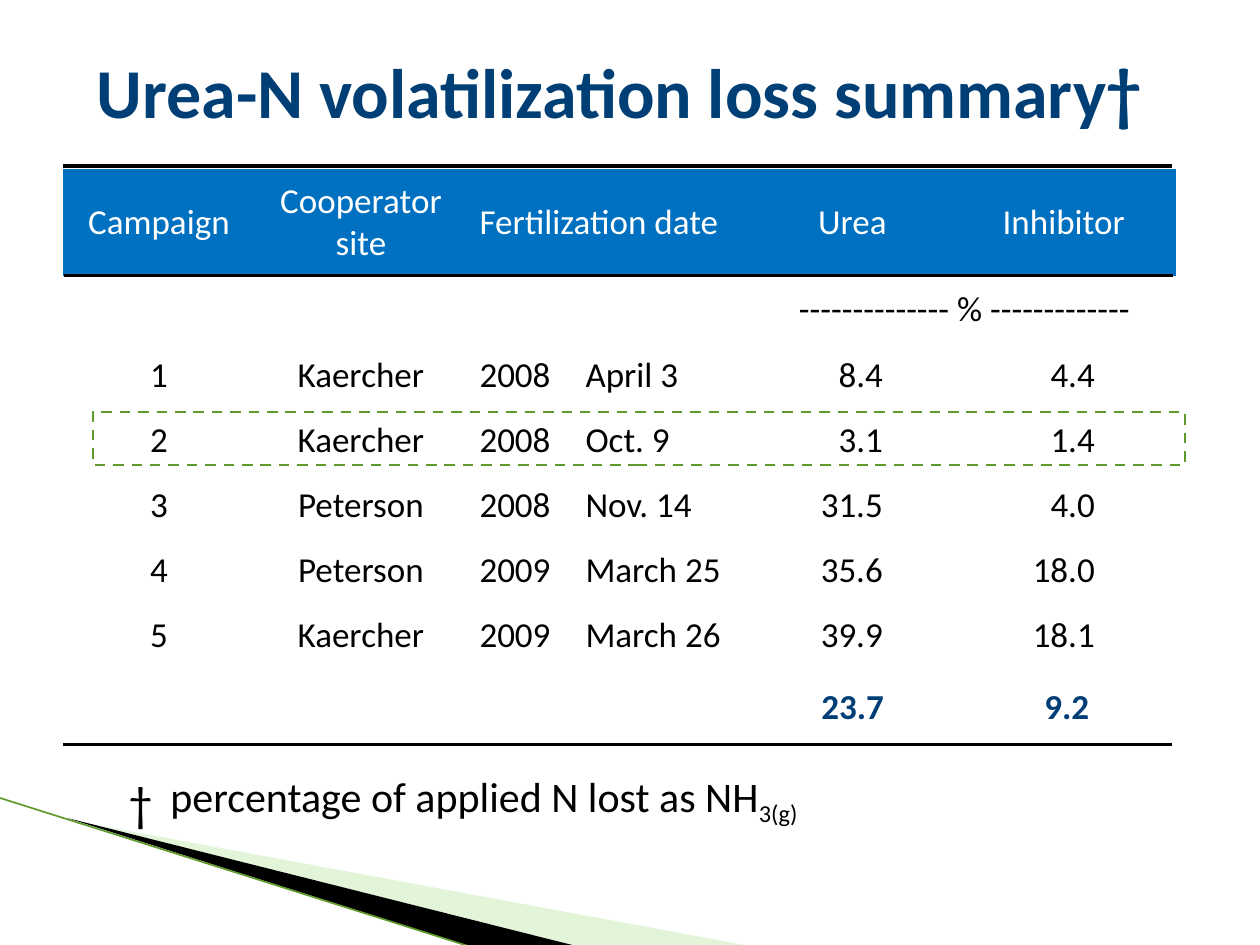
from pptx import Presentation
from pptx import util as u
from pptx.dml.color import RGBColor
from pptx.enum import dml, shapes, text
from pptx.oxml.ns import qn
from lxml import etree

PX = 914400 // 126
THEME = {
    "font": "Calibri", "title": 40, "dagger": 28, "note": 24, "body": 20,
    "navy": "003F75", "blue": "0070C0", "white": "FFFFFF", "black": "000000",
    "green": "5E9B2C", "pale": "E3F5D9",
}
NO_GRID_STYLE = "{2D5ABB26-0587-4C30-8999-92F81FD0307C}"
LEFT, CENTER, RIGHT = text.PP_ALIGN.LEFT, text.PP_ALIGN.CENTER, text.PP_ALIGN.RIGHT

TITLE = "Urea-N volatilization loss summary†"
HEADER = ["Campaign", "Cooperator site", "Fertilization date", "", "Urea", "Inhibitor"]
UNIT_ROW = ["", "", "", "", "-------------- % -------------", ""]
RESULTS = [
    ["1", "Kaercher", "2008", "April 3", "8.4", "4.4"],
    ["2", "Kaercher", "2008", "Oct. 9", "3.1", "1.4"],
    ["3", "Peterson", "2008", "Nov. 14", "31.5", "4.0"],
    ["4", "Peterson", "2009", "March 25", "35.6", "18.0"],
    ["5", "Kaercher", "2009", "March 26", "39.9", "18.1"],
]
ROWS = [HEADER, UNIT_ROW, *RESULTS, [""] * 6]
MERGES = [((0, 2), (0, 3)), ((1, 4), (1, 5))]
COLUMN_WIDTHS = [192, 212, 106, 180, 199, 224]
ROW_HEIGHTS = [107, 67] + [65] * 6
TABLE_LEFT, TABLE_TOP = 63, 169
RESULT_ALIGNMENT = [CENTER, CENTER, LEFT, LEFT, RIGHT, RIGHT]
DECIMAL_MARGINS = {4: 69, 5: 81}  # space to the right of the figures
RULES = [(63, 166, 1172, 166), (64, 276, 1173, 276), (63, 745, 1172, 745)]
SWEEPS = [
    ("pale", [(69, 820), (750, 946), (575, 946)]),
    ("black", [(67, 818), (576, 946), (469, 946)]),
]
# left, top, width, height, runs of (text, is subscript), format
LABELS = [
    (809, 678, 88, 55, [("23.7", False)], {"color": "navy", "bold": True}),
    (1032, 678, 71, 55, [("9.2", False)], {"color": "navy", "bold": True}),
    (116, 766, 50, 72, [("†", False)], {"size": "dagger"}),
    (158, 764, 664, 63,
     [("percentage of applied N lost as NH", False), ("3(g)", True)], {"size": "note"}),
]


def color_of(name):
    return RGBColor.from_string(THEME[name])


def write(paragraph, content, size="body", color="black", bold=False,
          align=LEFT, subscript=False):
    paragraph.alignment = align
    run = paragraph.add_run()
    run.text = content
    run.font.name = THEME["font"]
    run.font.size = u.Pt(THEME[size])
    run.font.bold = bold
    run.font.color.rgb = color_of(color)
    if subscript:
        run.font._element.set("baseline", "-25000")


def add_line(slide, ends, color, width):
    line = slide.shapes.add_connector(
        shapes.MSO_CONNECTOR.STRAIGHT, *(value * PX for value in ends))
    line.line.color.rgb = color_of(color)
    line.line.width = u.Pt(width)
    etree.SubElement(line._element.spPr, qn("a:effectLst"))


def add_sweep(slide, color, points):
    builder = slide.shapes.build_freeform(*points[0], scale=PX)
    builder.add_line_segments(points[1:], close=True)
    sweep = builder.convert_to_shape()
    sweep.shadow.inherit = False
    sweep.fill.solid()
    sweep.fill.fore_color.rgb = color_of(color)
    sweep.line.fill.background()


def add_title(slide):
    title = slide.shapes.title
    title.left, title.top, title.width, title.height = (
        value * PX for value in (84, 16, 1155, 148))
    title.text_frame.vertical_anchor = text.MSO_ANCHOR.MIDDLE
    write(title.text_frame.paragraphs[0], TITLE, size="title", color="navy", bold=True)


def add_loss_table(slide):
    frame = slide.shapes.add_table(
        len(ROWS), len(COLUMN_WIDTHS), TABLE_LEFT * PX, TABLE_TOP * PX,
        sum(COLUMN_WIDTHS) * PX, sum(ROW_HEIGHTS) * PX)
    table = frame.table
    table.first_row = table.horz_banding = False
    table._tbl.tblPr.find(qn("a:tableStyleId")).text = NO_GRID_STYLE
    for column, width in zip(table.columns, COLUMN_WIDTHS):
        column.width = width * PX
    for row, height in zip(table.rows, ROW_HEIGHTS):
        row.height = height * PX
    for start, end in MERGES:
        table.cell(*start).merge(table.cell(*end))

    for row_index, values in enumerate(ROWS):
        is_header, is_result = row_index == 0, values in RESULTS
        for column_index, value in enumerate(values):
            cell = table.cell(row_index, column_index)
            cell.fill.solid()
            cell.fill.fore_color.rgb = color_of("blue" if is_header else "white")
            cell.vertical_anchor = text.MSO_ANCHOR.MIDDLE
            if not value:
                continue
            align = CENTER
            if is_result or column_index == 2:
                align = RESULT_ALIGNMENT[column_index]
            if is_result and column_index in DECIMAL_MARGINS:
                cell.margin_right = DECIMAL_MARGINS[column_index] * PX
            write(cell.text_frame.paragraphs[0], value, align=align,
                  color="white" if is_header else "black")


def add_label(slide, left, top, width, height, runs, style):
    box = slide.shapes.add_textbox(left * PX, top * PX, width * PX, height * PX)
    box.text_frame.word_wrap = False
    for content, subscript in runs:
        write(box.text_frame.paragraphs[0], content, subscript=subscript, **style)


def add_highlight(slide):
    highlight = slide.shapes.add_shape(
        shapes.MSO_SHAPE.RECTANGLE, 93 * PX, 412 * PX, 1092 * PX, 53 * PX)
    highlight.shadow.inherit = False
    highlight.fill.background()
    highlight.line.color.rgb = color_of("green")
    highlight.line.width = u.Pt(1.5)
    highlight.line.dash_style = dml.MSO_LINE.DASH


def main():
    presentation = Presentation()
    presentation.slide_width, presentation.slide_height = u.Inches(10), u.Inches(7.5)
    slide = presentation.slides.add_slide(presentation.slide_layouts[5])
    slide.background.fill.solid()
    slide.background.fill.fore_color.rgb = color_of("white")

    for color, points in SWEEPS:
        add_sweep(slide, color, points)
    add_line(slide, (0, 798, 468, 946), "green", 0.95)
    add_loss_table(slide)
    add_title(slide)
    for ends in RULES:
        add_line(slide, ends, "black", 1.75)
    for label in LABELS:
        add_label(slide, *label)
    add_highlight(slide)
    presentation.save("out.pptx")


if __name__ == "__main__":
    main()
